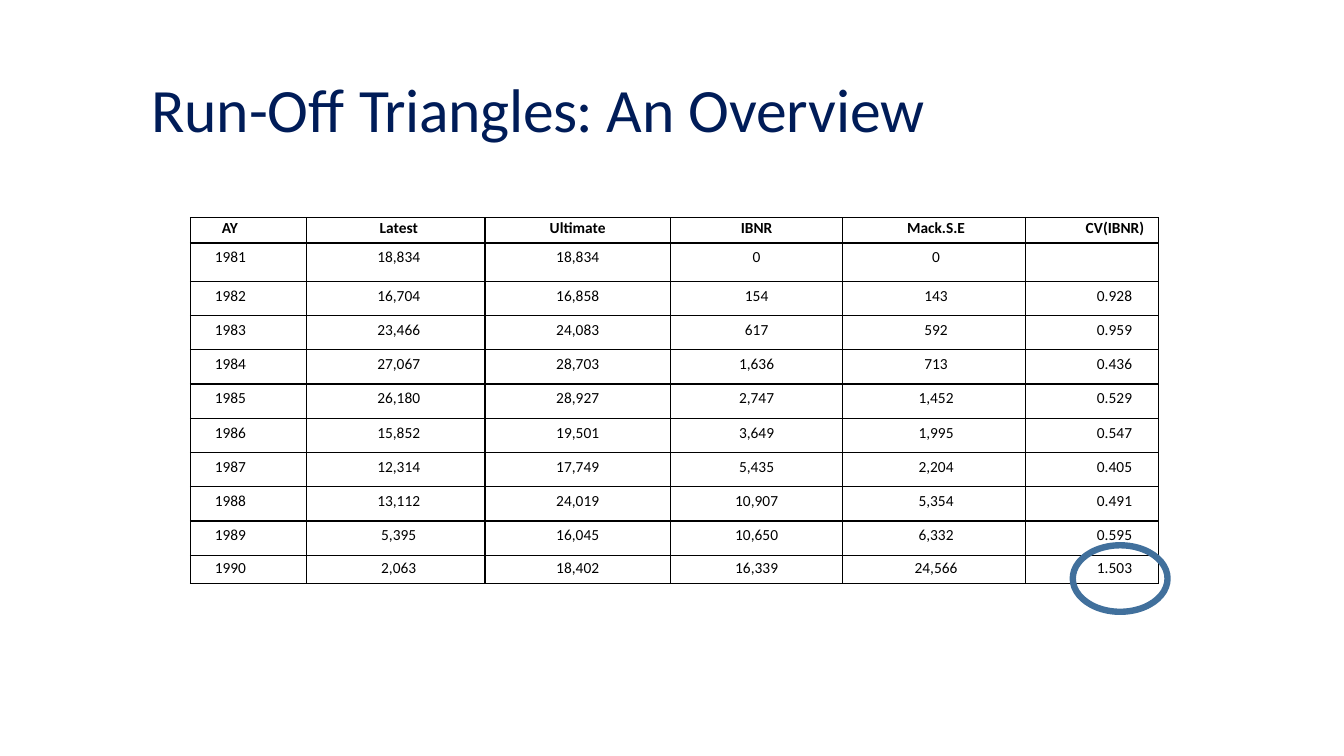
"""Build the run-off triangle overview slide with its reserve table."""
from dataclasses import dataclass

from lxml.etree import SubElement
from pptx import Presentation
from pptx.dml.color import RGBColor as Rgb
from pptx.enum.shapes import MSO_SHAPE as Preset
from pptx.enum.text import PP_ALIGN as Align
from pptx.oxml.ns import qn
from pptx.slide import Slide
from pptx.table import _Cell as Cell
from pptx.util import Inches, Pt

COLORS = {"title": "001C58", "ink": "000000", "paper": "FFFFFF", "highlight": "41709C"}
FONT = "Calibri"


@dataclass(frozen=True)
class Column:
    heading: str
    width: float
    indent: float
    heading_indent: float
    align: Align = Align.CENTER


@dataclass(frozen=True)
class RowStyle:
    height: float
    line_points: float | None = None
    bold: bool = False


COLUMNS = [
    Column("AY", 1.15, 0.14, 0.21, Align.LEFT),
    Column("Latest", 1.77, 0.06, 0.06),
    Column("Ultimate", 1.84, 0, 0),
    Column("IBNR", 1.71, 0, 0),
    Column("Mack.S.E", 1.81, 0.04, 0.04),
    Column("CV(IBNR)", 1.32, 0.45, 0.46),
]
RESERVES = [
    ("1981", "18,834", "18,834", "0", "0", ""),
    ("1982", "16,704", "16,858", "154", "143", "0.928"),
    ("1983", "23,466", "24,083", "617", "592", "0.959"),
    ("1984", "27,067", "28,703", "1,636", "713", "0.436"),
    ("1985", "26,180", "28,927", "2,747", "1,452", "0.529"),
    ("1986", "15,852", "19,501", "3,649", "1,995", "0.547"),
    ("1987", "12,314", "17,749", "5,435", "2,204", "0.405"),
    ("1988", "13,112", "24,019", "10,907", "5,354", "0.491"),
    ("1989", "5,395", "16,045", "10,650", "6,332", "0.595"),
    ("1990", "2,063", "18,402", "16,339", "24,566", "1.503"),
]
HEADER = RowStyle(0.25, 10.5, True)
ROW_STYLES = [HEADER, RowStyle(0.38)] + [RowStyle(0.34)] * 8 + [RowStyle(0.28, 12.8)]
TITLE_PARTS = [("Run-Off ", -10), ("Triangles: ", -30), ("An Overview", -10)]


def add_title(slide: Slide) -> None:
    title = slide.shapes.add_textbox(Inches(1.49), Inches(0.67), Inches(7.77), Inches(1.27))
    frame = title.text_frame
    frame.word_wrap = True
    frame.margin_left = Inches(0.01)
    frame.margin_top = Inches(0.03)
    frame.margin_right = frame.margin_bottom = 0
    for text, spacing in TITLE_PARTS:
        part = frame.paragraphs[0].add_run()
        part.text = text
        part.font.name, part.font.size = FONT, Pt(44)
        part.font.color.rgb = Rgb.from_string(COLORS["title"])
        part._r.get_or_add_rPr().set("spc", str(spacing))


def add_borders(cell: Cell) -> None:
    properties = cell._tc.get_or_add_tcPr()
    for index, side in enumerate(("lnL", "lnR", "lnT", "lnB")):
        border = properties.makeelement(qn(f"a:{side}"), {"w": str(Pt(0.96))})
        ink = SubElement(SubElement(border, qn("a:solidFill")), qn("a:srgbClr"))
        ink.set("val", COLORS["ink"])
        properties.insert(index, border)


def fill_cell(cell: Cell, text: str, column: Column, style: RowStyle) -> None:
    cell.fill.solid()
    cell.fill.fore_color.rgb = Rgb.from_string(COLORS["paper"])
    add_borders(cell)
    cell.text_frame.text = text
    entry = cell.text_frame.paragraphs[0]
    entry.alignment = column.align
    indent = column.heading_indent if style is HEADER else column.indent
    entry._p.get_or_add_pPr().set("marL", str(Inches(indent)))
    if style.line_points:
        entry.line_spacing = Pt(style.line_points)
    for run in entry.runs:
        run.font.name, run.font.size, run.font.bold = FONT, Pt(11), style.bold
        run.font.color.rgb = Rgb.from_string(COLORS["ink"])
    SubElement(entry._p, qn("a:endParaRPr")).set("sz", "1100")


def add_reserve_table(slide: Slide) -> None:
    rows = [tuple(column.heading for column in COLUMNS), *RESERVES]
    width = sum(column.width for column in COLUMNS)
    height = sum(style.height for style in ROW_STYLES)
    reserves = slide.shapes.add_table(
        len(rows), len(COLUMNS), Inches(1.89), Inches(2.16), Inches(width), Inches(height)
    ).table
    for index, column in enumerate(COLUMNS):
        reserves.columns[index].width = Inches(column.width)
    for row_index, (values, style) in enumerate(zip(rows, ROW_STYLES)):
        reserves.rows[row_index].height = Inches(style.height)
        for column_index, (text, column) in enumerate(zip(values, COLUMNS)):
            fill_cell(reserves.cell(row_index, column_index), text, column, style)


def add_highlight(slide: Slide) -> None:
    highlight = slide.shapes.add_shape(
        Preset.OVAL, Inches(10.64), Inches(5.41), Inches(0.94), Inches(0.66)
    )
    highlight.shadow.inherit = False
    highlight.fill.background()
    highlight.line.color.rgb = Rgb.from_string(COLORS["highlight"])
    highlight.line.width = Pt(4.56)


def main() -> None:
    deck = Presentation()
    deck.slide_width, deck.slide_height = Inches(13.33), Inches(7.5)
    slide = deck.slides.add_slide(deck.slide_layouts[6])
    add_title(slide)
    add_reserve_table(slide)
    add_highlight(slide)
    deck.save("out.pptx")


if __name__ == "__main__":
    main()
